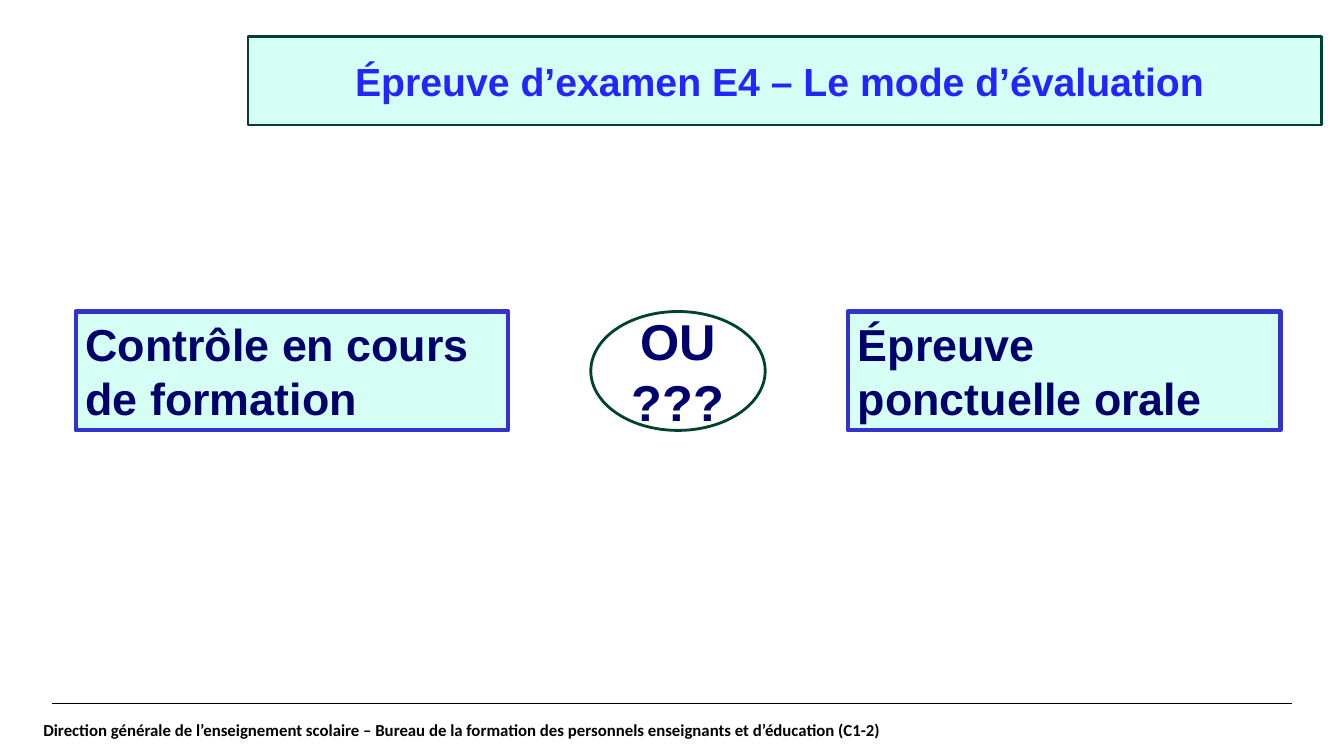
from dataclasses import dataclass

from lxml import etree
from pptx import Presentation
from pptx.dml.color import RGBColor as Color
from pptx.enum.shapes import MSO_CONNECTOR as Connector, MSO_SHAPE as Shape
from pptx.enum.text import MSO_ANCHOR as Anchor, MSO_AUTO_SIZE as AutoSize, PP_ALIGN as Align
from pptx.oxml.ns import qn
from pptx.util import Inches, Pt


@dataclass(frozen=True)
class Theme:
    mint: Color = Color.from_string("D5FFF4")
    white: Color = Color.from_string("FFFFFF")
    black: Color = Color.from_string("000000")
    green: Color = Color.from_string("004130")
    border: Color = Color.from_string("3333CC")
    title: Color = Color.from_string("2424FF")
    navy: Color = Color.from_string("00006D")
    title_size: int = 28
    option_size: int = 32
    choice_size: int = 36
    footer_size: int = 12


theme = Theme()


def paint(shape, fill, line, width):
    shape.fill.solid()
    shape.fill.fore_color.rgb = fill
    shape.line.color.rgb = line
    shape.line.width = Pt(width)


def write(box, lines, size, color, align=Align.LEFT, anchor=Anchor.MIDDLE, font="Arial"):
    frame = box.text_frame
    frame.word_wrap = True
    frame.auto_size = AutoSize.NONE
    frame.vertical_anchor = anchor
    for index, line in enumerate(lines):
        para = frame.add_paragraph() if index else frame.paragraphs[0]
        para.alignment = align
        span = para.add_run()
        span.text = line
        span.font.name = font
        span.font.size = Pt(size)
        span.font.bold = True
        span.font.color.rgb = color


deck = Presentation()
deck.slide_width, deck.slide_height = Inches(13.33), Inches(7.5)
page = deck.slides.add_slide(deck.slide_layouts[5])

# Footer rule and text
rule = page.shapes.add_connector(
    Connector.STRAIGHT, Inches(0.52), Inches(6.98), Inches(12.81), Inches(6.98))
rule.line.color.rgb = theme.black
rule.line.width = Pt(0.8)
etree.SubElement(rule._element.spPr, qn("a:effectLst"))

footer = page.shapes.add_textbox(Inches(0.43), Inches(6.98), Inches(12.54), Inches(0.52))
frame = footer.text_frame
frame.margin_left = frame.margin_right = frame.margin_top = frame.margin_bottom = 0
write(footer, ["Direction générale de l’enseignement scolaire – Bureau de la formation "
               "des personnels enseignants et d’éducation (C1-2)"],
      theme.footer_size, theme.black, font="Calibri")

# Title in a rounded frame
title = page.shapes.title
title.left, title.top = Inches(2.46), Inches(0.36)
title.width, title.height = Inches(10.65), Inches(0.88)
outline = etree.Element(qn("a:prstGeom"), prst="roundRect")
etree.SubElement(outline, qn("a:avLst"))
title._element.spPr.insert(1, outline)
paint(title, theme.mint, theme.green, 2)
write(title, ["Épreuve d’examen E4 – Le mode d’évaluation "],
      theme.title_size, theme.title, Align.CENTER)

# Two options with the choice between them
row_top, row_height = Inches(3.09), Inches(1.18)
for left, label in ((0.75, "Contrôle en cours de formation"), (8.41, "Épreuve ponctuelle orale")):
    option = page.shapes.add_shape(
        Shape.RECTANGLE, Inches(left), row_top, Inches(4.29), row_height)
    option.shadow.inherit = False
    paint(option, theme.mint, theme.border, 3)
    write(option, [label], theme.option_size, theme.navy, anchor=Anchor.TOP)

choice = page.shapes.add_shape(Shape.OVAL, Inches(5.86), row_top, Inches(1.73), row_height)
choice.shadow.inherit = False
paint(choice, theme.white, theme.green, 2)
write(choice, ["OU", "??? "], theme.choice_size, theme.navy, Align.CENTER)

deck.save("out.pptx")
